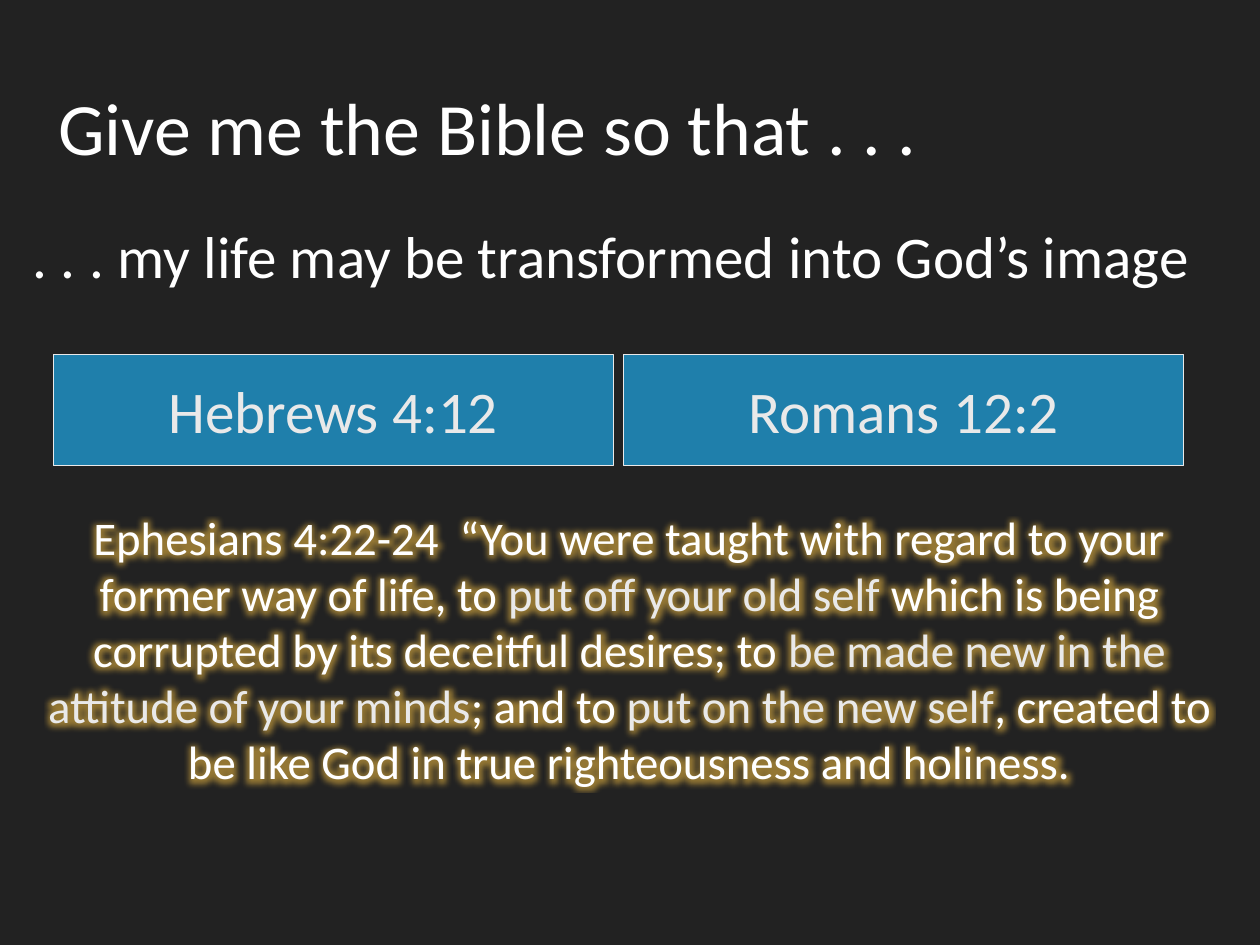
from lxml import etree
from pptx import Presentation
from pptx.dml.color import RGBColor
from pptx.enum.shapes import MSO_SHAPE as SHAPE
from pptx.enum.text import MSO_ANCHOR as ANCHOR, MSO_AUTO_SIZE as AUTO, PP_ALIGN as ALIGN
from pptx.oxml import parse_xml
from pptx.oxml.ns import nsdecls, qn
from pptx.util import Inches, Pt

DARK = RGBColor(0x22, 0x22, 0x22)
WHITE = RGBColor(0xFF, 0xFF, 0xFF)
PALE = RGBColor(0xE9, 0xE9, 0xE9)
BLUE = RGBColor(0x1F, 0x7F, 0xAB)
GOLD = RGBColor(0xE0, 0xB0, 0x40)

TITLE = "Give me the Bible so that . . ."
SUBTITLE = ". . . my life may be transformed into God’s image"
REFERENCES = ["Hebrews 4:12", "Romans 12:2"]
PASSAGE = [
    ("Ephesians 4:22-24  “You were taught with regard to your former way of life, to ", WHITE),
    ("put off your old self ", PALE),
    ("which is being corrupted by its deceitful desires; to ", WHITE),
    ("be made new in the attitude of your minds", PALE),
    ("; and to ", WHITE),
    ("put on the new self", PALE),
    (", created to be like God in true righteousness and holiness.", WHITE),
]

TITLE_BOX = (0.6, 0.69, 13.03, 1.46)
SUBTITLE_BOX = (0.31, 2.25, 13.47, 1.26)
PASSAGE_BOX = (0.31, 5.5, 13.59, 3.65)
CARD_LEFT, CARD_TOP, CARD_W, CARD_H, CARD_STEP = 0.6, 4, 6.32, 1.26, 6.44

INSET = Inches(0.06)
FRAME = {
    "word_wrap": True, "vertical_anchor": ANCHOR.MIDDLE, "auto_size": AUTO.SHAPE_TO_FIT_TEXT,
    "margin_left": INSET, "margin_right": INSET, "margin_top": INSET, "margin_bottom": INSET,
}


def inches(box):
    return [Inches(v) for v in box]


def write(sp, runs, size, align=ALIGN.LEFT):
    tf = sp.text_frame
    for name, value in FRAME.items():
        setattr(tf, name, value)
    p = tf.paragraphs[0]
    p.alignment = align
    p.space_before = Pt(24)
    for text, color in runs:
        r = p.add_run()
        r.text = text
        for name, value in {"name": "Calibri", "size": Pt(size)}.items():
            setattr(r.font, name, value)
        r.font.color.rgb = color


def add_glow(sp):
    for r in sp.text_frame.paragraphs[0].runs:
        glow = parse_xml(
            f'<a:effectLst {nsdecls("a")}><a:glow rad="127000"><a:srgbClr val="{GOLD}">'
            '<a:alpha val="60000"/></a:srgbClr></a:glow></a:effectLst>')
        r.font.fill
        r._r.rPr.find(qn("a:solidFill")).addnext(glow)


prs = Presentation()
prs.slide_width, prs.slide_height = Inches(14.22), Inches(10.67)
s = prs.slides.add_slide(prs.slide_layouts[5])
s.background.fill.solid()
s.background.fill.fore_color.rgb = DARK

title = s.shapes.title
title.left, title.top, title.width, title.height = inches(TITLE_BOX)
write(title, [(TITLE, WHITE)], 60)

subtitle = s.shapes.add_textbox(*inches(SUBTITLE_BOX))
write(subtitle, [(SUBTITLE, WHITE)], 48)

for i, reference in enumerate(REFERENCES):
    box = (CARD_LEFT + i * CARD_STEP, CARD_TOP, CARD_W, CARD_H)
    card = s.shapes.add_shape(SHAPE.RECTANGLE, *inches(box))
    card.shadow.inherit = False
    card.fill.solid()
    card.fill.fore_color.rgb = BLUE
    card.line.color.rgb = PALE
    card.line.width = Pt(1)
    write(card, [(reference, PALE)], 48, ALIGN.CENTER)

passage = s.shapes.add_textbox(*inches(PASSAGE_BOX))
write(passage, PASSAGE, 38, ALIGN.CENTER)
add_glow(passage)

prs.save("out.pptx")
